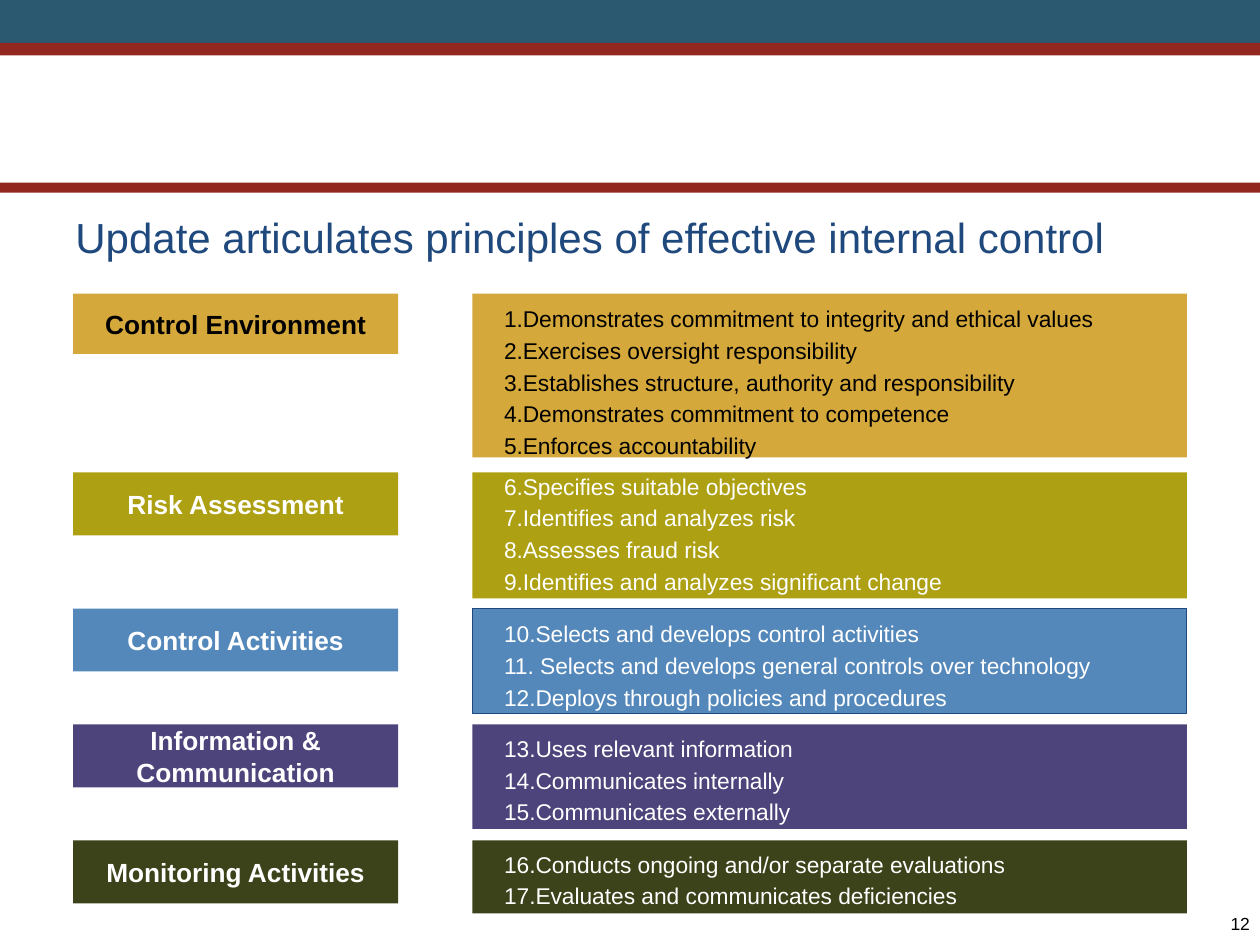
"""Build the slide on the principles of effective internal control."""
import pptx
import pptx.dml.color
import pptx.enum.shapes
import pptx.enum.text
import pptx.util
from lxml import etree
from pptx.util import Inches, Pt

ALIGN = pptx.enum.text.PP_ALIGN
MIDDLE = pptx.enum.text.MSO_ANCHOR.MIDDLE


def add_bar(left, top, width, height, fill, line=None):
    bar = slide.shapes.add_shape(
        pptx.enum.shapes.MSO_SHAPE.RECTANGLE,
        Inches(left), Inches(top), Inches(width), Inches(height))
    bar.shadow.inherit = False
    bar.fill.solid()
    bar.fill.fore_color.rgb = pptx.dml.color.RGBColor.from_string(fill)
    if line:
        bar.line.color.rgb = pptx.dml.color.RGBColor.from_string(line)
        bar.line.width = Pt(0.5)
    else:
        bar.line.fill.background()
    return bar


def write(paragraph, text, size, color, bold=False):
    run = paragraph.add_run()
    run.text = text
    run.font.name = "Arial"
    run.font.size = Pt(size)
    run.font.bold = bold
    run.font.color.rgb = pptx.dml.color.RGBColor.from_string(color)


deck = pptx.Presentation()
deck.slide_width = Inches(10)
deck.slide_height = Inches(7.5)
slide = deck.slides.add_slide(deck.slide_layouts[6])

for top, height, fill in [(0, 0.34, "2A5970"), (0.34, 0.1, "91271F"), (1.45, 0.08, "91271F")]:
    add_bar(0, top, 10, height, fill)

title = slide.shapes.add_textbox(Inches(0.5), Inches(1.42), Inches(9.33), Inches(0.92)).text_frame
title.word_wrap = True
title.vertical_anchor = MIDDLE
write(title.paragraphs[0], "Update articulates principles of effective internal control", 24, "1F497D")

components = [
    ("Control Environment", 2.33, 0.48, 1.3, 2.42, "D5A83B", None, "000000", [
        (1, "Demonstrates commitment to integrity and ethical values"),
        (1, "Exercises oversight responsibility"),
        (1, "Establishes structure, authority and responsibility"),
        (1, "Demonstrates commitment to competence"),
        (1, "Enforces accountability")]),
    ("Risk Assessment", 3.75, 0.5, 1, 3.75, "ADA012", None, "FFFFFF", [
        (6, "Specifies suitable objectives"),
        (6, "Identifies and analyzes risk"),
        (6, "Assesses fraud risk"),
        (6, "Identifies and analyzes significant change")]),
    ("Control Activities", 4.83, 0.5, 0.83, 4.92, "5488BB", "1F497D", "FFFFFF", [
        (10, "Selects and develops control activities"),
        (None, "11. Selects and develops general controls over technology"),
        (12, "Deploys through policies and procedures")]),
    ("Information & Communication", 5.75, 0.5, 0.83, 5.83, "4D447B", None, "FFFFFF", [
        (13, "Uses relevant information"),
        (13, "Communicates internally"),
        (13, "Communicates externally")]),
    ("Monitoring Activities", 6.67, 0.5, 0.58, 6.75, "3C421A", None, "FFFFFF", [
        (16, "Conducts ongoing and/or separate evaluations"),
        (16, "Evaluates and communicates deficiencies")]),
]

for name, top, label_height, panel_height, list_top, fill, line, color, principles in components:
    label = add_bar(0.58, top, 2.58, label_height, fill).text_frame
    label.word_wrap = True
    label.vertical_anchor = MIDDLE
    label.margin_left = label.margin_right = Inches(0.05)
    label.margin_top = label.margin_bottom = Inches(0.03)
    label.paragraphs[0].alignment = ALIGN.CENTER
    label.paragraphs[0].space_after = Pt(2)
    write(label.paragraphs[0], name, 15, color, bold=True)

    add_bar(3.75, top, 5.67, panel_height, fill, line)
    listing = slide.shapes.add_textbox(
        Inches(4), Inches(list_top), Inches(5.42), Inches(top + panel_height - list_top)).text_frame
    listing.word_wrap = True
    listing.margin_left = listing.margin_right = 0
    listing.margin_top = listing.margin_bottom = 0
    for index, (start, principle) in enumerate(principles):
        paragraph = listing.add_paragraph() if index else listing.paragraphs[0]
        paragraph.space_after = Pt(2.5)
        properties = paragraph._p.get_or_add_pPr()
        properties.set("marL", "0")
        properties.set("indent", str(-Inches(0.3)))
        if start:
            etree.SubElement(properties, pptx.oxml.ns.qn("a:buFont"), typeface="+mj-lt")
            etree.SubElement(properties, pptx.oxml.ns.qn("a:buAutoNum"),
                             type="arabicPeriod", startAt=str(start))
        write(paragraph, principle, 13, color)

page = slide.shapes.add_textbox(Inches(8.25), Inches(7.25), Inches(1.67), Inches(0.17)).text_frame
page.word_wrap = True
page.margin_left = page.margin_right = page.margin_top = page.margin_bottom = 0
page.paragraphs[0].alignment = ALIGN.RIGHT
write(page.paragraphs[0], "12", 10, "000000")

deck.save("out.pptx")
